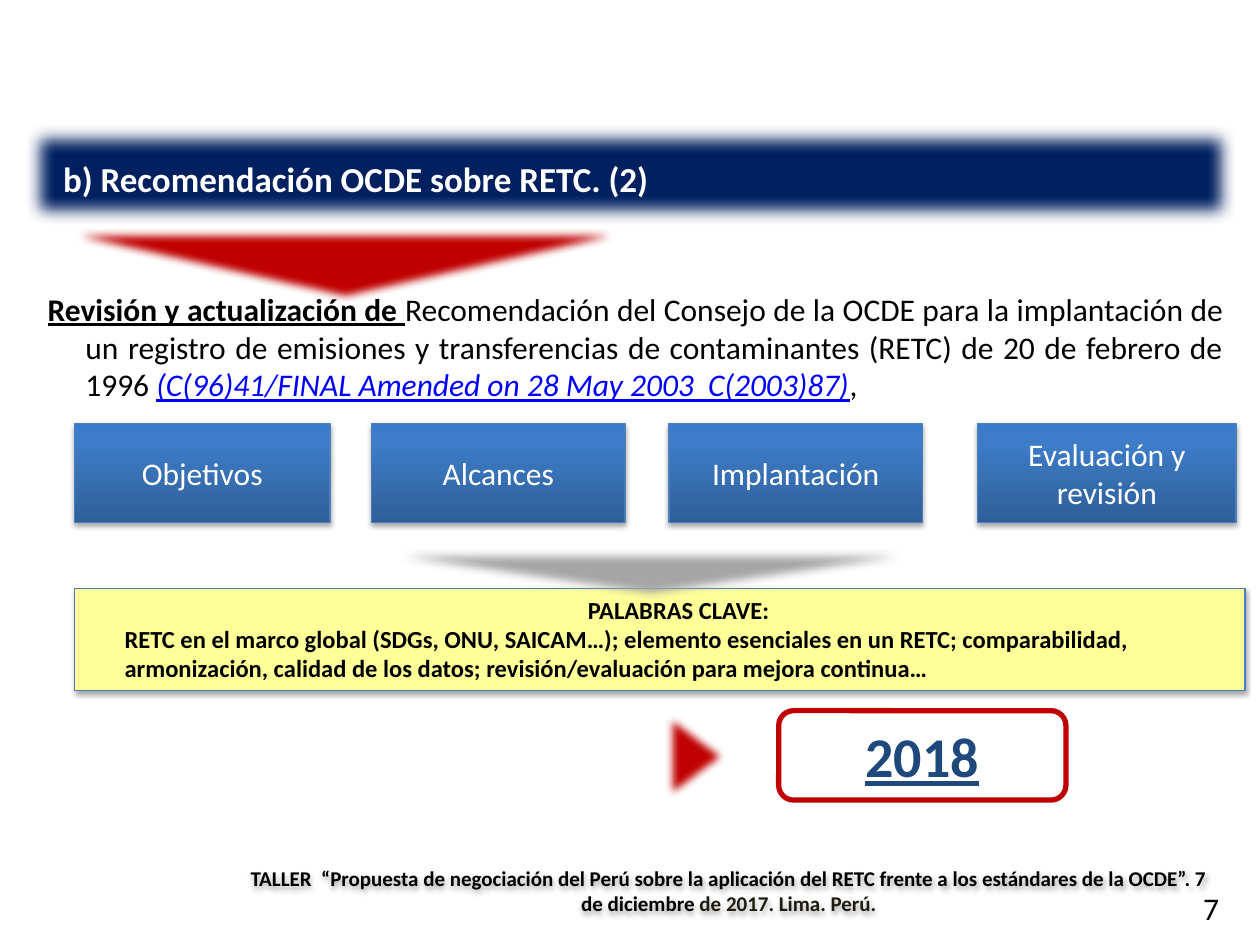
from dataclasses import dataclass
from typing import NamedTuple, Optional

import pptx
import pptx.dml.color
import pptx.enum.shapes
import pptx.enum.text
import pptx.oxml.ns
import pptx.util
from lxml import etree

RGB = pptx.dml.color.RGBColor
SHAPE = pptx.enum.shapes.MSO_SHAPE
ALIGN = pptx.enum.text.PP_ALIGN
ANCHOR = pptx.enum.text.MSO_ANCHOR
qn = pptx.oxml.ns.qn

PX = 9144  # EMU per px, 100 px to the inch
FONT = "Calibri"

NAVY = RGB(0x00, 0x20, 0x60)
RED = RGB(0xC0, 0x00, 0x00)
GRAY = RGB(0xA6, 0xA6, 0xA6)
YELLOW = RGB(0xFF, 0xFF, 0x99)
WHITE = RGB(0xFF, 0xFF, 0xFF)
BLACK = RGB(0x00, 0x00, 0x00)
DARK = RGB(0x1E, 0x1C, 0x11)
LINK = RGB(0x00, 0x00, 0xFF)
BLUE_TEXT = RGB(0x1F, 0x49, 0x7D)
BLUE_LINE = RGB(0x4B, 0x7E, 0xBC)
BUTTON_STOPS = (
    (0, RGB(0x2F, 0x5F, 0x99)),
    (80, RGB(0x3D, 0x7C, 0xC7)),
    (100, RGB(0x3A, 0x7C, 0xCB)),
)


class Box(NamedTuple):
    x: int
    y: int
    w: int
    h: int


@dataclass
class Run:
    text: str
    size: int
    color: RGB = BLACK
    bold: bool = False
    italic: bool = False
    underline: bool = False


@dataclass
class Arrow:
    box: Box
    color: RGB
    rotation: int = 0


@dataclass
class Button:
    text: str
    x: int
    w: int


ARROWS = (
    Arrow(Box(238, -63, 71, 538), RED, 90),
    Arrow(Box(516, 556, 71, 89), RED),
    Arrow(Box(491, 161, 50, 583), GRAY, 90),
)
BUTTONS = (
    Button("Objetivos", 59, 203),
    Button("Alcances", 295, 201),
    Button("Implantación", 531, 201),
    Button("Evaluación y revisión", 776, 205),
)


def place(sp, box: Box) -> None:
    sp.left, sp.top, sp.width, sp.height = (v * PX for v in box)


def add_effect(sp, tag: str, **attrs: int):
    sp.shadow.inherit = False
    effects = sp._element.spPr.find(qn("a:effectLst"))
    return etree.SubElement(effects, qn(tag), {k: str(v) for k, v in attrs.items()})


def soften(sp, radius: int) -> None:
    add_effect(sp, "a:softEdge", rad=radius)


def cast_shadow(sp) -> None:
    shadow = add_effect(sp, "a:outerShdw", blurRad=40000, dist=22000,
                        dir=5400000, rotWithShape=0)
    clr = etree.SubElement(shadow, qn("a:srgbClr"), val=str(BLACK))
    etree.SubElement(clr, qn("a:alpha"), val="35000")


def add_box(s, box: Box, fill: Optional[RGB] = None, line: Optional[RGB] = None,
            width: float = 0.75, kind=SHAPE.RECTANGLE):
    sp = s.shapes.add_shape(kind, *(v * PX for v in box))
    sp.shadow.inherit = False
    if fill is None:
        sp.fill.background()
    else:
        sp.fill.solid()
        sp.fill.fore_color.rgb = fill
    if line is None:
        sp.line.fill.background()
    else:
        sp.line.color.rgb = line
        sp.line.width = pptx.util.Pt(width)
    sp.text_frame.word_wrap = True
    return sp


def add_textbox(s, box: Box):
    sp = s.shapes.add_textbox(*(v * PX for v in box))
    sp.text_frame.word_wrap = True
    return sp


def write(p, *runs: Run, align=ALIGN.LEFT, margin: int = 0, indent: int = 0) -> None:
    p.alignment = align
    pPr = p._p.get_or_add_pPr()
    pPr.set("marL", str(margin * PX))
    pPr.set("indent", str(indent * PX))
    for run in runs:
        r = p.add_run()
        r.text = run.text
        r.font.name = FONT
        r.font.size = pptx.util.Pt(run.size)
        r.font.color.rgb = run.color
        r.font.bold = run.bold
        r.font.italic = run.italic
        r.font.underline = run.underline


def add_arrow(s, arrow: Arrow) -> None:
    sp = add_box(s, arrow.box, arrow.color, kind=SHAPE.STRIPED_RIGHT_ARROW)
    sp.adjustments[0], sp.adjustments[1] = 1, 0.84
    sp.rotation = arrow.rotation
    soften(sp, 63500)


def add_button(s, button: Button) -> None:
    sp = add_box(s, Box(button.x, 336, button.w, 79), line=BLUE_LINE)
    sp.fill.gradient()
    sp.fill.gradient_angle = 90
    stops = sp._element.spPr.find(".//" + qn("a:gsLst"))
    stops.clear()
    for pos, color in BUTTON_STOPS:
        gs = etree.SubElement(stops, qn("a:gs"), pos=str(pos * 1000))
        etree.SubElement(gs, qn("a:srgbClr"), val=str(color))
    cast_shadow(sp)
    sp.text_frame.vertical_anchor = ANCHOR.MIDDLE
    write(sp.text_frame.paragraphs[0], Run(button.text, 18, WHITE), align=ALIGN.CENTER)


def main() -> None:
    prs = pptx.Presentation()
    prs.slide_width, prs.slide_height = 1000 * PX, 750 * PX
    s = prs.slides.add_slide(prs.slide_layouts[5])

    # Title banner
    title = s.shapes.title
    place(title, Box(20, 99, 961, 79))
    title.fill.solid()
    title.fill.fore_color.rgb = NAVY
    soften(title, 112500)
    tf = title.text_frame
    tf.auto_size = pptx.enum.text.MSO_AUTO_SIZE.NONE
    tf.word_wrap = False
    tf.vertical_anchor = ANCHOR.MIDDLE
    write(tf.paragraphs[0], Run("b) Recomendación OCDE sobre RETC. (2)", 20, WHITE, bold=True),
          margin=20)
    tf.paragraphs[0].line_spacing = 1.2

    # Workshop footer
    footer = add_box(s, Box(177, 674, 803, 66), kind=SHAPE.ROUNDED_RECTANGLE)
    cast_shadow(footer)
    footer.text_frame.vertical_anchor = ANCHOR.MIDDLE
    write(footer.text_frame.paragraphs[0],
          Run("TALLER  “Propuesta de negociación del Perú sobre la aplicación del RETC "
              "frente a los estándares de la OCDE”. 7 de diciembre ", 12, bold=True),
          Run("de 2017. Lima. Perú.", 12, DARK, bold=True), align=ALIGN.CENTER)

    # Recommendation paragraph and page number
    body = add_textbox(s, Box(28, 225, 953, 101))
    write(body.text_frame.paragraphs[0],
          Run("Revisión y actualización de ", 18, bold=True, underline=True),
          Run("Recomendación del Consejo de la OCDE para la implantación de un registro de "
              "emisiones y transferencias de contaminantes (RETC) de 20 de febrero de 1996 ", 18),
          Run("(C(96)41/FINAL Amended on 28 May 2003  C(2003)87)", 18, LINK,
              italic=True, underline=True),
          Run(",", 18), align=ALIGN.JUSTIFY, margin=30, indent=-30)
    number = add_textbox(s, Box(945, 701, 37, 27))
    write(number.text_frame.paragraphs[0], Run("7", 18))

    # Topic buttons
    for button in BUTTONS:
        add_button(s, button)

    # Year
    year = add_box(s, Box(618, 564, 228, 71), WHITE, RED, 3, SHAPE.ROUNDED_RECTANGLE)
    year.text_frame.vertical_anchor = ANCHOR.MIDDLE
    write(year.text_frame.paragraphs[0],
          Run("2018", 32, BLUE_TEXT, bold=True, underline=True), align=ALIGN.CENTER)

    # Keywords
    keywords = add_box(s, Box(59, 467, 929, 81), YELLOW, BLUE_LINE)
    cast_shadow(keywords)
    tf = keywords.text_frame
    tf.vertical_anchor = ANCHOR.TOP
    write(tf.paragraphs[0], Run("PALABRAS CLAVE:", 14, bold=True),
          align=ALIGN.CENTER, margin=30)
    write(tf.add_paragraph(),
          Run("RETC en el marco global (SDGs, ONU, SAICAM…); elemento esenciales en un RETC; "
              "comparabilidad, armonización, calidad de los datos; revisión/evaluación para "
              "mejora continua…", 14, bold=True), margin=30)

    # Arrows
    for arrow in ARROWS:
        add_arrow(s, arrow)

    prs.save("out.pptx")


if __name__ == "__main__":
    main()
